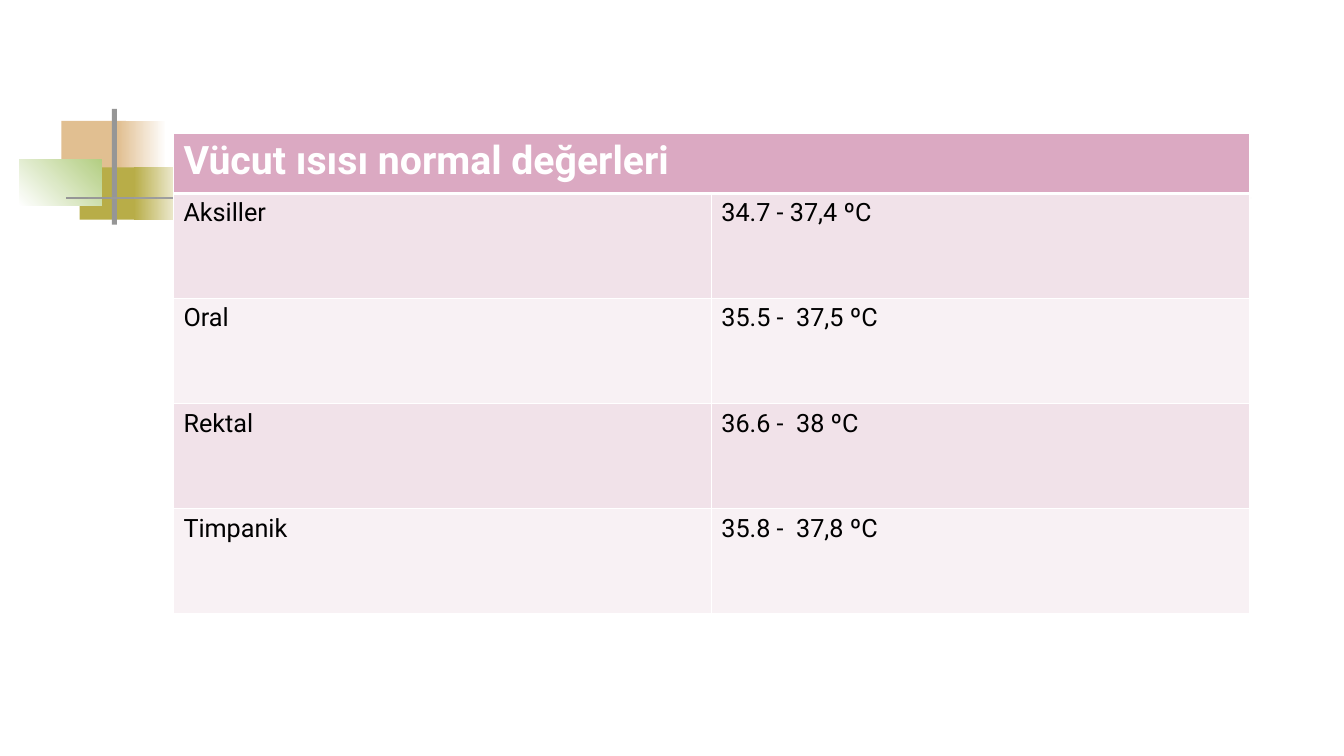
from lxml import etree
from pptx import Presentation
from pptx.dml.color import RGBColor
from pptx.enum.shapes import MSO_SHAPE
from pptx.oxml.ns import qn
from pptx.util import Inches, Pt

RECTANGLE = MSO_SHAPE.RECTANGLE
BLANK_LAYOUT = 6
FONT = "Roboto"
WHITE, BLACK, GREY = "FFFFFF", "000000", "969696"
ORANGE, OLIVE, GREEN = "E1BF91", "B8AD48", "B3CE82"
HEADER_FILL = "DBA9C2"
BAND_FILLS = ("F1E2E9", "F8F1F4")
HEADER_FORMAT = {"size": Pt(28), "bold": True, "name": FONT}
BODY_FORMAT = {"size": Pt(18), "bold": False, "name": FONT}
HEADER_HEIGHT = 0.6

ORNAMENT_PARTS = (
    ((0.42, 0.12, 0.64, 0.52), (ORANGE,), 0),
    ((0.98, 0.12, 0.48, 0.52), (ORANGE, WHITE), 0),
    ((0.60, 0.58, 0.61, 0.52), (OLIVE,), 0),
    ((1.14, 0.58, 0.54, 0.52), (OLIVE, WHITE), 0),
    ((0, 0.50, 0.82, 0.46), (WHITE, GREEN), 45),
    ((0.92, 0, 0.05, 1.15), (GREY,), 0),
    ((0.46, 0.87, 11.99, 0.03), (GREY, WHITE), 0),
)

TITLE = "Vücut ısısı normal değerleri"
TEMPERATURES = (
    ("Aksiller", "34.7 - 37,4 ºC"),
    ("Oral", "35.5 -  37,5 ºC"),
    ("Rektal", "36.6 -  38 ºC"),
    ("Timpanik", "35.8 -  37,8 ºC"),
)


def colour(value):
    return RGBColor.from_string(value)


def paint(fill, colours, angle):
    if len(colours) == 1:
        fill.solid()
        fill.fore_color.rgb = colour(colours[0])
        return
    fill.gradient()
    fill.gradient_angle = angle
    for stop, value in zip(fill.gradient_stops, colours):
        stop.color.rgb = colour(value)


def add_ornament(page, left, top):
    for (across, down, width, height), colours, angle in ORNAMENT_PARTS:
        block = page.shapes.add_shape(
            RECTANGLE, Inches(left + across), Inches(top + down),
            Inches(width), Inches(height))
        block.shadow.inherit = False
        block.line.fill.background()
        paint(block.fill, colours, angle)


def set_borders(cell, bottom_width):
    properties = cell._tc.get_or_add_tcPr()
    widths = {"a:lnL": 1, "a:lnR": 1, "a:lnT": 1, "a:lnB": bottom_width}
    for position, (tag, width) in enumerate(widths.items()):
        line = etree.Element(qn(tag), w=str(Pt(width)))
        solid = etree.SubElement(line, qn("a:solidFill"))
        etree.SubElement(solid, qn("a:srgbClr"), val=WHITE)
        properties.insert(position, line)


def format_cell(cell, text, fill, text_colour, font_format, bottom_width=1):
    paint(cell.fill, (fill,), 0)
    set_borders(cell, bottom_width)
    span = cell.text_frame.paragraphs[0].add_run()
    span.text = text
    span.font.color.rgb = colour(text_colour)
    for name, value in font_format.items():
        setattr(span.font, name, value)


def add_temperature_table(page, left, top, width, height):
    row_count = len(TEMPERATURES)
    table = page.shapes.add_table(
        row_count + 1, 2, Inches(left), Inches(top),
        Inches(width), Inches(height)).table
    for column in table.columns:
        column.width = Inches(width / 2)
    for row in table.rows:
        row.height = Inches((height - HEADER_HEIGHT) / row_count)
    table.rows[0].height = Inches(HEADER_HEIGHT)

    table.cell(0, 0).merge(table.cell(0, 1))
    for column, text in enumerate((TITLE, "")):
        format_cell(table.cell(0, column), text, HEADER_FILL, WHITE,
                    HEADER_FORMAT, bottom_width=3)
    for row, texts in enumerate(TEMPERATURES):
        for column, text in enumerate(texts):
            format_cell(table.cell(row + 1, column), text,
                        BAND_FILLS[row % 2], BLACK, BODY_FORMAT)


def main():
    deck = Presentation()
    deck.slide_width, deck.slide_height = Inches(13.33), Inches(7.5)
    page = deck.slides.add_slide(deck.slide_layouts[BLANK_LAYOUT])
    add_ornament(page, 0.19, 1.08)
    add_temperature_table(page, 1.72, 1.32, 10.67, 4.77)
    deck.save("out.pptx")


if __name__ == "__main__":
    main()
